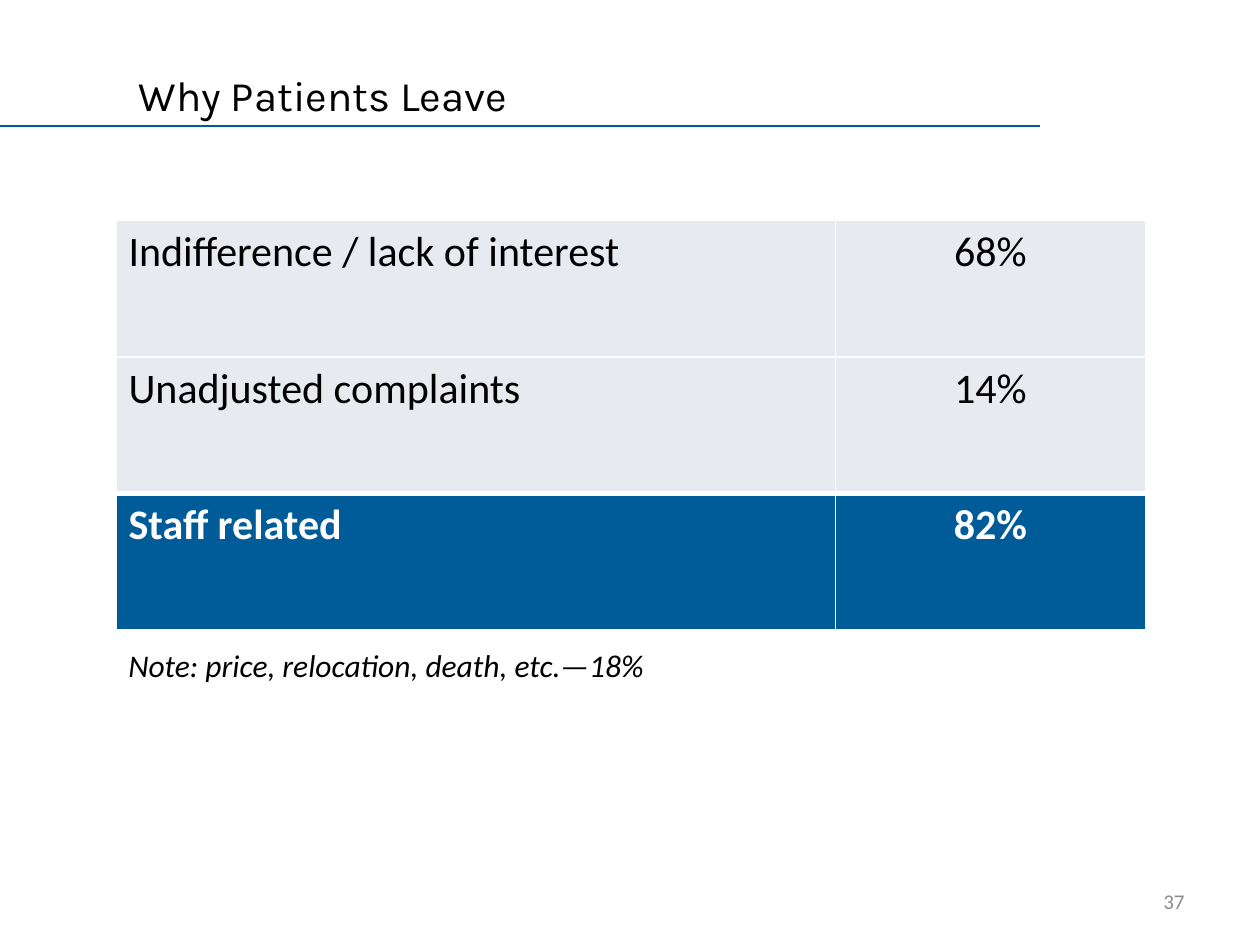
import dataclasses

import lxml.etree
import pptx
import pptx.dml.color
import pptx.enum.shapes
import pptx.enum.text
import pptx.oxml.ns
import pptx.util

WIDTH, HEIGHT = 10, 7.5
BLUE, PALE, GREY, BLACK, WHITE = "005B99", "E7EAEF", "8C8C8C", "000000", "FFFFFF"
LEFT, CENTER, RIGHT = (getattr(pptx.enum.text.PP_ALIGN, n) for n in ("LEFT", "CENTER", "RIGHT"))
MIDDLE = pptx.enum.text.MSO_ANCHOR.MIDDLE
TOP = pptx.enum.text.MSO_ANCHOR.TOP
TABLE_LEFT = 0.092
COLUMN_SHARES = (0.571, 0.246)
ROW_SHARE = 0.1444


@dataclasses.dataclass
class Reason:
    label: str
    share: str
    total: bool = False


REASONS = [
    Reason("Indifference / lack of interest", "68%"),
    Reason("Unadjusted complaints", "14%"),
    Reason("Staff related", "82%", total=True),
]


def across(share: float) -> int:
    return pptx.util.Inches(WIDTH * share)


def down(share: float) -> int:
    return pptx.util.Inches(HEIGHT * share)


def area(left: float, top: float, width: float, height: float) -> tuple:
    return across(left), down(top), across(width), down(height)


def colour(value: str) -> pptx.dml.color.RGBColor:
    return pptx.dml.color.RGBColor.from_string(value)


def write(frame, text: str, size: float, ink: str = BLACK, align=LEFT, **formats) -> None:
    para = frame.paragraphs[0]
    para.alignment = align
    span = para.add_run()
    span.text = text
    values = {"name": "Calibri", "size": pptx.util.Pt(size)} | formats
    for name, value in values.items():
        setattr(span.font, name, value)
    span.font.color.rgb = colour(ink)


def add_text(page, box: tuple, text: str, size: float, wrap: bool = True,
             anchor=TOP, **formats) -> None:
    frame = page.shapes.add_textbox(*box).text_frame
    frame.word_wrap = wrap
    frame.vertical_anchor = anchor
    write(frame, text, size, **formats)


def add_borders(cell, widths: dict) -> None:
    properties = cell._tc.get_or_add_tcPr()
    for side, width in widths.items():
        edge = lxml.etree.SubElement(properties, pptx.oxml.ns.qn(f"a:ln{side}"),
                                     w=str(pptx.util.Pt(width)))
        fill = lxml.etree.SubElement(edge, pptx.oxml.ns.qn("a:solidFill"))
        lxml.etree.SubElement(fill, pptx.oxml.ns.qn("a:srgbClr"), val=WHITE)


def add_reasons(page, reasons: list) -> None:
    box = area(TABLE_LEFT, 0.2333, sum(COLUMN_SHARES), ROW_SHARE * len(reasons))
    table = page.shapes.add_table(len(reasons), len(COLUMN_SHARES), *box).table
    table.first_row = table.horz_banding = False
    for column, share in zip(table.columns, COLUMN_SHARES):
        column.width = across(share)
    for index, reason in enumerate(reasons):
        table.rows[index].height = down(ROW_SHARE)
        before_total = index + 1 < len(reasons) and reasons[index + 1].total
        widths = {"L": 1, "R": 1, "T": 3 if reason.total else 1, "B": 3 if before_total else 1}
        for column, (text, align) in enumerate([(reason.label, LEFT), (reason.share, CENTER)]):
            cell = table.cell(index, column)
            add_borders(cell, widths)
            cell.fill.solid()
            cell.fill.fore_color.rgb = colour(BLUE if reason.total else PALE)
            write(cell.text_frame, text, 24, WHITE if reason.total else BLACK,
                  align, bold=reason.total)


def add_rule(page) -> None:
    height = down(2 / 15)
    rule = page.shapes.add_connector(pptx.enum.shapes.MSO_CONNECTOR.STRAIGHT,
                                     0, height, across(0.825), height)
    rule.line.color.rgb = colour(BLUE)
    rule.line.width = pptx.util.Pt(0.75)
    lxml.etree.SubElement(rule._element.spPr, pptx.oxml.ns.qn("a:effectLst"))


def main() -> None:
    deck = pptx.Presentation()
    deck.slide_width, deck.slide_height = across(1), down(1)
    page = deck.slides.add_slide(deck.slide_layouts[5])

    # Heading and the rule beneath it
    add_rule(page)
    title = page.shapes.title
    title.left, title.top, title.width, title.height = area(0.1, 1 / 15, 0.7, 1 / 15)
    title.text_frame.vertical_anchor = MIDDLE
    write(title.text_frame, "Why Patients Leave", 24, name="Karla")

    # Reasons table, note and page number
    add_reasons(page, REASONS)
    add_text(page, area(TABLE_LEFT, 0.6773, 0.434, 0.0533),
             "Note: price, relocation, death, etc.—18%", 18, wrap=False, italic=True)
    add_text(page, area(0.717, 0.9267, 0.233, 0.0533), "37", 12,
             anchor=MIDDLE, ink=GREY, align=RIGHT)

    deck.save("out.pptx")


if __name__ == "__main__":
    main()
